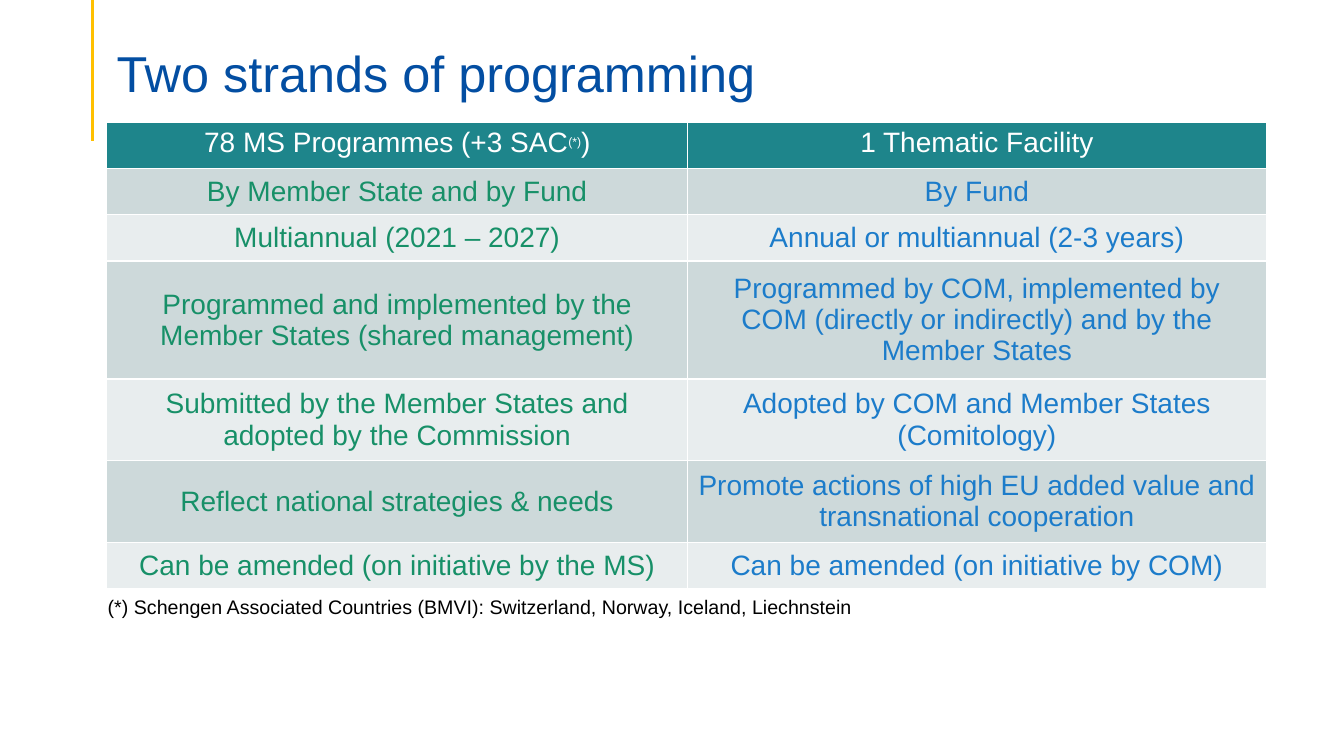
from lxml.etree import SubElement
from pptx import Presentation
from pptx.dml.color import RGBColor
from pptx.enum.shapes import MSO_CONNECTOR
from pptx.enum.text import MSO_ANCHOR, PP_ALIGN
from pptx.oxml.ns import qn
from pptx.util import Inches, Pt

WHITE, TEAL, GREEN, BLUE = "FFFFFF", "1E858B", "179068", "1C7CCA"
BANDS = ["E8EDEE", "CDD9DA"]
WIDTHS = [5.76, 5.74]
HEIGHTS = [0.46, 0.46, 0.46, 1.17, 0.81, 0.81, 0.46]
HEADS = ["78 MS Programmes (+3 SAC|(*)|)", "1 Thematic Facility"]
ROWS = [
    ("By Member State and by Fund", "By Fund"),
    ("Multiannual (2021 – 2027)", "Annual or multiannual (2-3 years)"),
    ("Programmed and implemented by the Member States (shared management)",
     "Programmed by COM, implemented by COM (directly or indirectly) and by the Member States"),
    ("Submitted by the Member States and adopted by the Commission",
     "Adopted by COM and Member States (Comitology)"),
    ("Reflect national strategies & needs",
     "Promote actions of high EU added value and transnational cooperation"),
    ("Can be amended (on initiative by the MS)", "Can be amended (on initiative by COM)"),
]
NOTE = "(*) Schengen Associated Countries (BMVI): Switzerland, Norway, Iceland, Liechnstein"


def color(code):
    """Turn a hex string into a colour."""
    return RGBColor.from_string(code)


def style(para, size, code):
    """Set the font of a paragraph."""
    font = para.font
    font.name, font.size, font.bold = "Arial", Pt(size), False
    font.color.rgb = color(code)


def add_text(slide, box, text, size, code):
    """Add a wrapped text box and return its frame."""
    frame = slide.shapes.add_textbox(*map(Inches, box)).text_frame
    frame.word_wrap = True
    frame.text = text
    style(frame.paragraphs[0], size, code)
    return frame


def add_rule(slide, x, end):
    """Draw the yellow rule down from the top edge."""
    rule = slide.shapes.add_connector(
        MSO_CONNECTOR.STRAIGHT, Inches(x), Inches(0), Inches(x), Inches(end))
    rule.line.color.rgb = color("FFC000")
    rule.line.width = Pt(2.25)
    SubElement(rule.element.spPr, qn("a:effectLst"))


def fill_cell(cell, text, fill, ink):
    """Fill a cell, raising each second part of its text."""
    cell.fill.solid()
    cell.fill.fore_color.rgb = color(fill)
    para = cell.text_frame.paragraphs[0]
    para.alignment = PP_ALIGN.CENTER
    style(para, 20, ink)
    for i, part in enumerate(text.split("|")):
        run = para.add_run()
        run.text = part
        if i % 2:
            run.font.size = Pt(15)
            run.font._element.set("baseline", "30000")


def add_grid(slide):
    """Add the table that compares both strands."""
    box = map(Inches, (1.06, 1.21, sum(WIDTHS), sum(HEIGHTS)))
    grid = slide.shapes.add_table(len(HEIGHTS), len(WIDTHS), *box).table
    for col, width in zip(grid.columns, WIDTHS):
        col.width = Inches(width)
    for row, height in zip(grid.rows, HEIGHTS):
        row.height = Inches(height)
    for c, text in enumerate(HEADS):
        fill_cell(grid.cell(0, c), text, TEAL, WHITE)
    for r, texts in enumerate(ROWS, 1):
        for c, (text, ink) in enumerate(zip(texts, (GREEN, BLUE))):
            cell = grid.cell(r, c)
            cell.vertical_anchor = MSO_ANCHOR.MIDDLE
            fill_cell(cell, text, BANDS[r % 2], ink)


def main():
    """Build the slide and save it."""
    deck = Presentation()
    deck.slide_width, deck.slide_height = Inches(13.33), Inches(7.5)
    slide = deck.slides.add_slide(deck.slide_layouts[6])
    add_rule(slide, 0.92, 1.4)
    add_grid(slide)
    title = add_text(slide, (1.06, 0.17, 11.5, 0.86), "Two strands of programming", 36, "034EA2")
    title.vertical_anchor = MSO_ANCHOR.BOTTOM
    title.margin_bottom = 0
    title.paragraphs[0].line_spacing = 0.9
    add_text(slide, (0.97, 5.85, 9.88, 0.34), NOTE, 14, "000000")
    deck.save("out.pptx")


if __name__ == "__main__":
    main()
